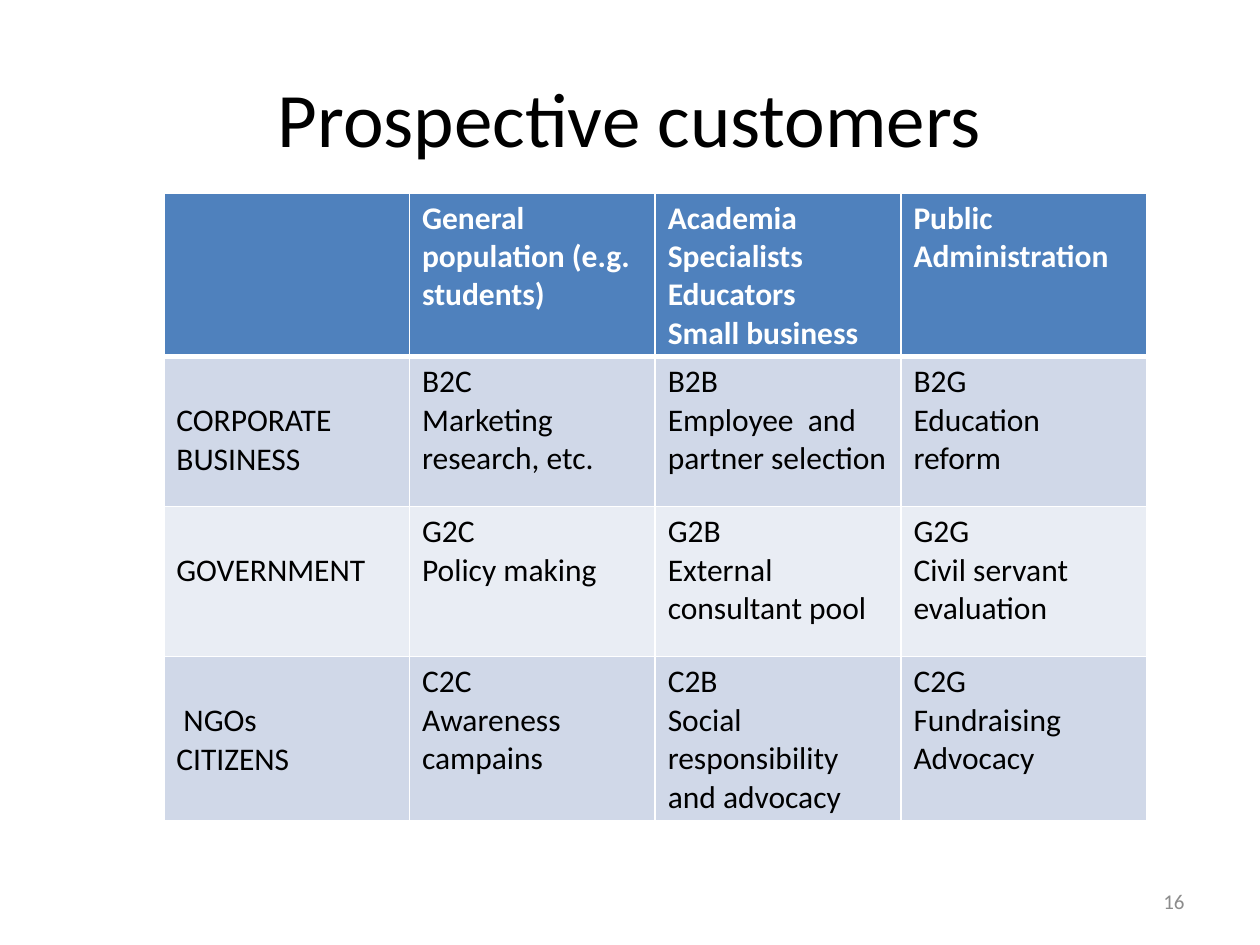
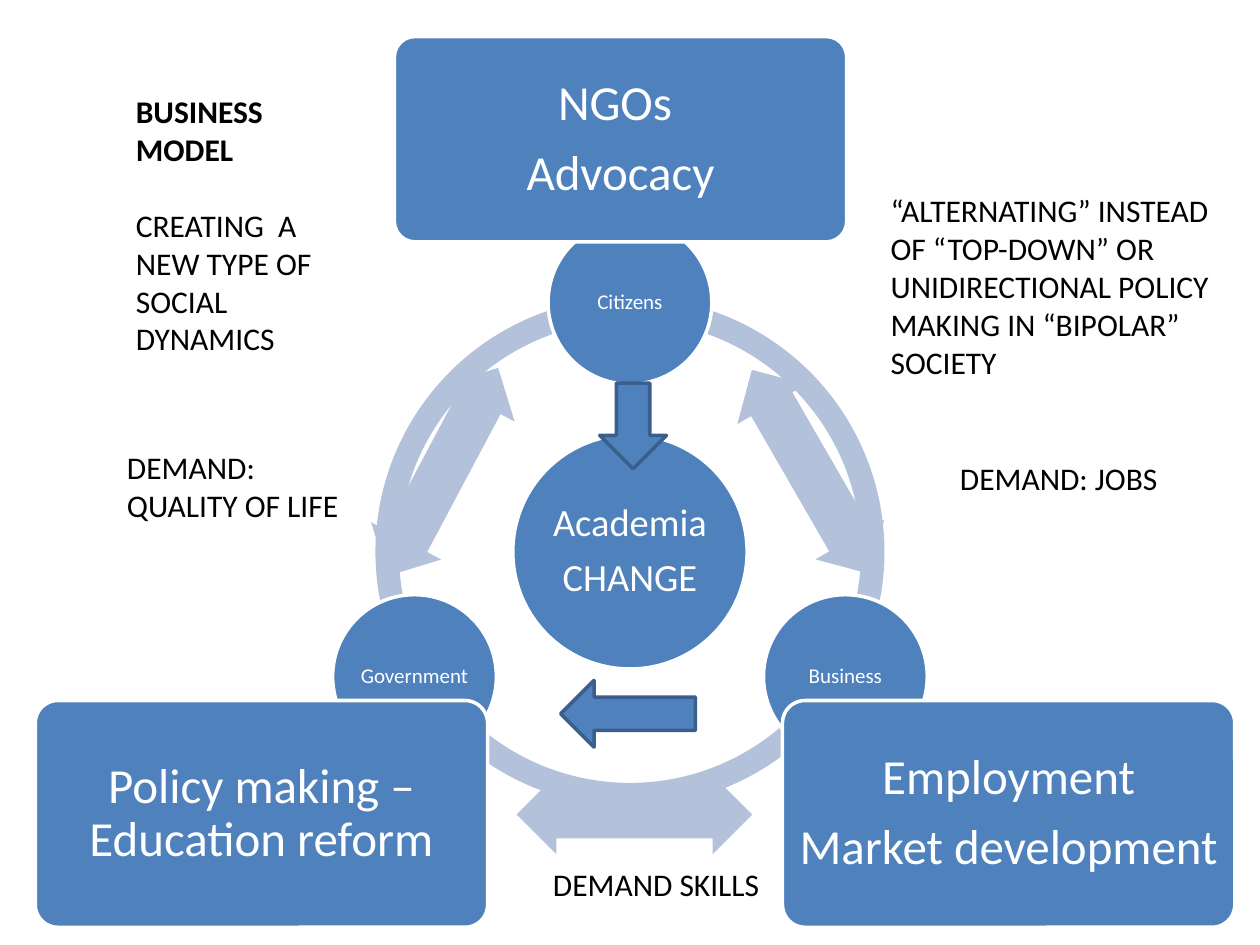
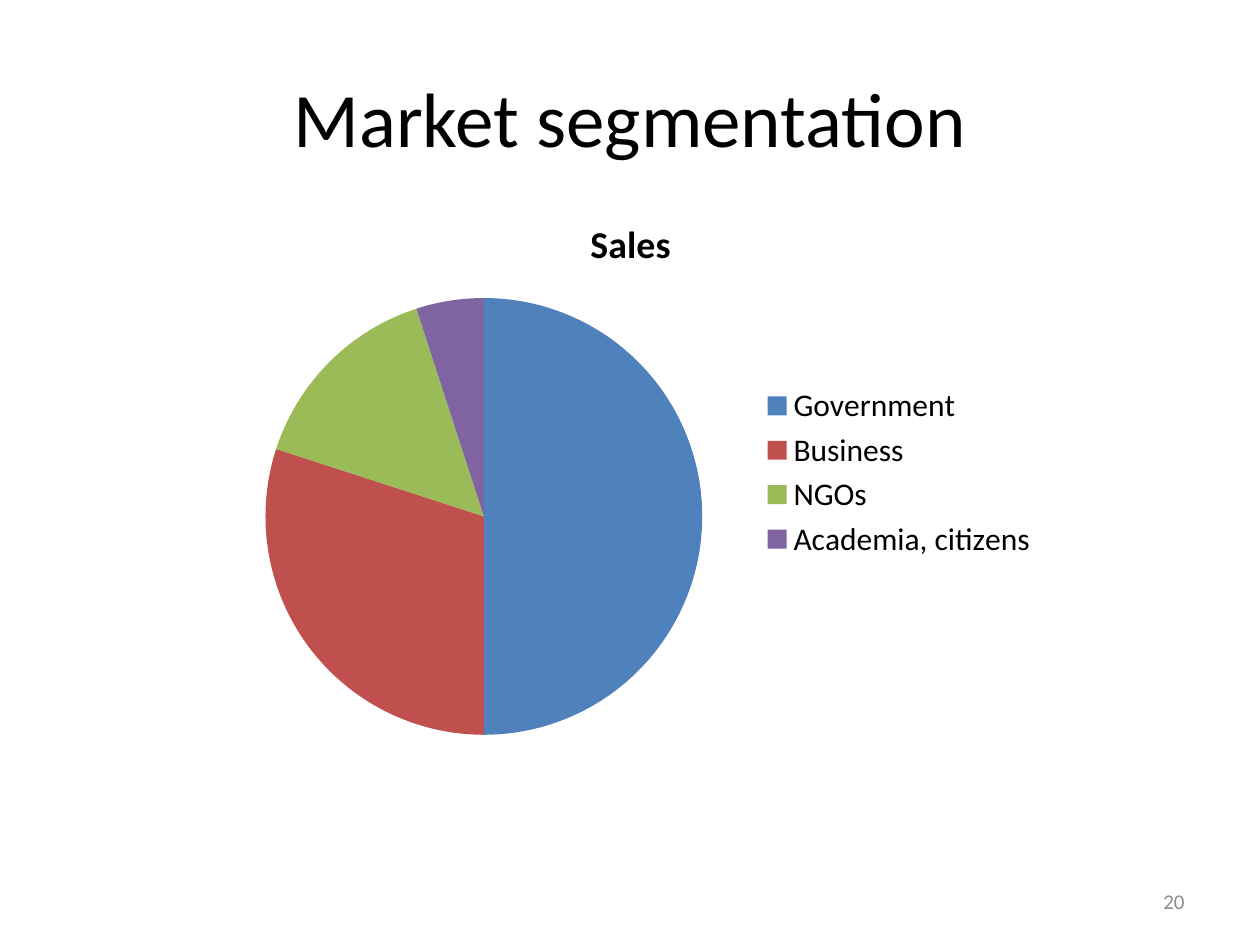
from dataclasses import dataclass
from math import cos, radians, sin

from lxml import etree
from pptx import Presentation
from pptx.chart.data import CategoryChartData
from pptx.dml.color import RGBColor
from pptx.enum.chart import XL_CHART_TYPE, XL_LEGEND_POSITION
from pptx.enum.shapes import MSO_SHAPE
from pptx.enum.text import MSO_ANCHOR, PP_ALIGN
from pptx.oxml.ns import qn
from pptx.util import Inches, Pt

# Shared look
FONT = "Calibri"
BLACK = RGBColor(0x00, 0x00, 0x00)
WHITE = RGBColor(0xFF, 0xFF, 0xFF)
GRAY = RGBColor(0x8C, 0x8C, 0x8C)
BLUE = RGBColor(0x4F, 0x81, 0xBD)
DARK_BLUE = RGBColor(0x3A, 0x5F, 0x8C)
PALE_BLUE = RGBColor(0xB3, 0xC1, 0xDB)
BANDS = (RGBColor(0xD0, 0xD8, 0xE8), RGBColor(0xE9, 0xED, 0xF4))
PIE_COLORS = (BLUE, RGBColor(0xC0, 0x50, 0x4D), RGBColor(0x9B, 0xBB, 0x59),
              RGBColor(0x80, 0x64, 0xA2))

LEFT, CENTER, RIGHT = PP_ALIGN.LEFT, PP_ALIGN.CENTER, PP_ALIGN.RIGHT
TOP, MIDDLE = MSO_ANCHOR.TOP, MSO_ANCHOR.MIDDLE
ARC, OVAL, CARD = MSO_SHAPE.BLOCK_ARC, MSO_SHAPE.OVAL, MSO_SHAPE.ROUNDED_RECTANGLE
DOUBLE_ARROW = MSO_SHAPE.LEFT_RIGHT_ARROW
LEFT_ARROW, DOWN_ARROW = MSO_SHAPE.LEFT_ARROW, MSO_SHAPE.DOWN_ARROW
PIE, LEGEND_RIGHT = XL_CHART_TYPE.PIE, XL_LEGEND_POSITION.RIGHT

BODY_SIZE = 18
LINE_HEIGHT = 1.22  # of the font size


@dataclass(frozen=True)
class Place:
    left: float
    top: float
    width: float
    height: float

    def lengths(self) -> tuple:
        return tuple(Inches(n) for n in (self.left, self.top, self.width, self.height))


@dataclass(frozen=True)
class Style:
    size: float = BODY_SIZE
    color: RGBColor = BLACK
    bold: bool = False
    align: PP_ALIGN = LEFT


@dataclass(frozen=True)
class Figure:
    kind: MSO_SHAPE
    place: Place
    fill: RGBColor = BLUE
    outline: RGBColor | None = WHITE
    adjustments: tuple[float, ...] = ()
    rotation: float = 0
    lines: tuple[str, ...] = ()
    size: float = BODY_SIZE
    inset: float = 0


@dataclass(frozen=True)
class Note:
    place: Place
    lines: tuple[str, ...]
    heading: str = ""


TITLE = Style(44, align=CENTER)
NUMBER = Style(12, GRAY, align=RIGHT)
HEADER = Style(color=WHITE, bold=True)
BODY = Style()


def add_span(para, text: str, style: Style) -> None:
    para.alignment = style.align
    span = para.add_run()
    span.text = text
    span.font.name = FONT
    span.font.size = Pt(style.size)
    span.font.bold = style.bold
    span.font.color.rgb = style.color


def write_lines(frame, lines: tuple[str, ...], style: Style) -> list:
    paras = []
    for index, text in enumerate(lines):
        para = frame.add_paragraph() if index else frame.paragraphs[0]
        add_span(para, text, style)
        paras.append(para)
    return paras


def add_box(page, place: Place, anchor: MSO_ANCHOR = TOP):
    frame = page.shapes.add_textbox(*place.lengths()).text_frame
    frame.word_wrap = True
    frame.vertical_anchor = anchor
    return frame


def add_page(deck, title: str = "", number: str = ""):
    page = deck.slides.add_slide(deck.slide_layouts[6])
    if title:
        write_lines(add_box(page, Place(0.5, 0.3, 9, 1.25), MIDDLE), (title,), TITLE)
    if number:
        write_lines(add_box(page, Place(7.17, 6.95, 2.33, 0.4), MIDDLE), (number,), NUMBER)
    return page


def add_figure(page, figure: Figure) -> None:
    shape = page.shapes.add_shape(figure.kind, *figure.place.lengths())
    shape.shadow.inherit = False
    shape.rotation = figure.rotation
    for index, value in enumerate(figure.adjustments):
        shape.adjustments[index] = value
    shape.fill.solid()
    shape.fill.fore_color.rgb = figure.fill
    if figure.outline is None:
        shape.line.fill.background()
    else:
        shape.line.color.rgb = figure.outline
        shape.line.width = Pt(2)
    if figure.lines:
        frame = shape.text_frame
        frame.word_wrap = True
        frame.vertical_anchor = MIDDLE
        frame.margin_left = frame.margin_right = Inches(figure.inset)
        frame.margin_top = frame.margin_bottom = Inches(figure.inset)
        for para in write_lines(frame, figure.lines, Style(figure.size, WHITE, align=CENTER)):
            para.line_spacing = 0.9
            para.space_after = Pt(round(0.35 * figure.size, 1))


def add_note(page, note: Note) -> None:
    frame = add_box(page, note.place)
    if not note.heading:
        write_lines(frame, note.lines, BODY)
        return
    add_span(frame.paragraphs[0], note.heading, Style(bold=True))
    for index, text in enumerate(note.lines):
        para = frame.add_paragraph()
        add_span(para, text, BODY)
        if index == 0:
            para.space_before = Pt(BODY_SIZE * LINE_HEIGHT)


def set_borders(cell, top: float, bottom: float) -> None:
    properties = cell._tc.get_or_add_tcPr()
    for side, width in (("L", 1), ("R", 1), ("T", top), ("B", bottom)):
        line = etree.SubElement(properties, qn(f"a:ln{side}"), w=str(Pt(width)))
        fill = etree.SubElement(line, qn("a:solidFill"))
        etree.SubElement(fill, qn("a:srgbClr"), val=str(WHITE))


# Customer table: one tuple of lines for each cell
CUSTOMERS = (
    ((), ("General population (e.g. students)",),
     ("Academia", "Specialists", "Educators", "Small business"),
     ("Public", "Administration")),
    (("CORPORATE", "BUSINESS"), ("B2C", "Marketing research, etc."),
     ("B2B", "Employee  and partner selection"), ("B2G", "Education reform")),
    (("GOVERNMENT",), ("G2C", "Policy making"),
     ("G2B", "External consultant pool"), ("G2G", "Civil servant evaluation")),
    ((" NGOs", "CITIZENS"), ("C2C", "Awareness campains"),
     ("C2B", "Social responsibility and advocacy"), ("C2G", "Fundraising", "Advocacy")),
)


def build_customers(deck) -> None:
    page = add_page(deck, "Prospective customers", "16")
    place = Place(1.3, 1.53, 7.8, 4.76)
    table = page.shapes.add_table(len(CUSTOMERS), len(CUSTOMERS[0]), *place.lengths()).table
    for row, cells in enumerate(CUSTOMERS):
        for column, lines in enumerate(cells):
            cell = table.cell(row, column)
            set_borders(cell, 3 if row == 1 else 1, 3 if row == 0 else 1)
            cell.fill.solid()
            cell.fill.fore_color.rgb = BANDS[(row - 1) % 2] if row else BLUE
            write_lines(cell.text_frame, lines, BODY if row else HEADER)
            if row and column == 0:  # row names start one line lower
                cell.margin_top = Inches(0.36)


# Social dynamics ring
RING_X, RING_Y = 5, 4.38
ORBIT = 1.98


def circle(radius: float, x: float = RING_X, y: float = RING_Y) -> Place:
    return Place(round(x - radius, 2), round(y - radius, 2), 2 * radius, 2 * radius)


def ring_arc(start: float, end: float) -> Figure:
    # Angles are stored in 60000ths of a degree, adjustments in 100000ths
    return Figure(ARC, circle(2.02), PALE_BLUE, None, (start * 0.6, end * 0.6, 0.046))


def ring_node(label: str, angle: float) -> Figure:
    x = RING_X + ORBIT * cos(radians(angle))
    y = RING_Y + ORBIT * sin(radians(angle))
    return Figure(OVAL, circle(0.65, x, y), lines=(label,), size=12)


def card(left: float, top: float, height: float, *lines: str) -> Figure:
    return Figure(CARD, Place(left, top, 3.59, height), adjustments=(0.1,),
                  lines=lines, size=28, inset=0.06)


def exchange(left: float, top: float, rotation: float) -> Figure:
    return Figure(DOUBLE_ARROW, Place(left, top, 1.87, 0.63), PALE_BLUE, None,
                  (0.6, 0.5), rotation)


FIGURES = (
    ring_arc(90, 162),
    ring_arc(18, 90),
    ring_arc(162, 18),
    Figure(OVAL, circle(0.93), lines=("Academia", "CHANGE"), size=22),
    ring_node("Citizens", -90),
    ring_node("Business", 30),
    ring_node("Government", 150),
    Figure(LEFT_ARROW, Place(4.45, 5.4, 1.07, 0.53), outline=DARK_BLUE),
    Figure(DOWN_ARROW, Place(4.76, 3.04, 0.53, 0.68), outline=DARK_BLUE),
    card(3.13, 0.29, 1.63, "NGOs ", "Advocacy"),
    exchange(5.5, 3.43, 60),
    card(6.21, 5.56, 1.8, "Employment", "Market development"),
    exchange(4.1, 6.15, 180),
    card(0.28, 5.56, 1.8, "Policy making – Education reform"),
    exchange(2.58, 3.43, 298),
)

NOTES = (
    Note(Place(4.29, 6.82, 1.97, 0.4), ("DEMAND SKILLS",)),
    Note(Place(7.52, 3.59, 1.89, 0.4), ("DEMAND: JOBS",)),
    Note(Place(0.91, 3.51, 1.97, 0.71), ("DEMAND:", "QUALITY OF LIFE")),
    Note(Place(0.98, 0.68, 1.65, 2.22), ("CREATING  A NEW TYPE OF", "SOCIAL DYNAMICS"),
         "BUSINESS MODEL"),
    Note(Place(6.97, 1.47, 2.76, 1.62),
         ("“ALTERNATING” INSTEAD OF “TOP-DOWN” OR UNIDIRECTIONAL POLICY MAKING "
          "IN “BIPOLAR” SOCIETY",)),
)


def build_dynamics(deck) -> None:
    page = add_page(deck)
    for figure in FIGURES:
        add_figure(page, figure)
    for note in NOTES:
        add_note(page, note)


# Market segments
SEGMENTS = {"Government": 50, "Business": 30, "NGOs": 15, "Academia, citizens": 5}


def build_segments(deck) -> None:
    page = add_page(deck, "Market segmentation", "20")
    data = CategoryChartData()
    data.categories = list(SEGMENTS)
    data.add_series("Sales", list(SEGMENTS.values()))
    place = Place(1.67, 1.53, 6.67, 4.44)
    chart = page.shapes.add_chart(PIE, *place.lengths(), data).chart
    chart.font.name = FONT
    chart.font.size = Pt(BODY_SIZE)
    chart.font.color.rgb = BLACK
    chart.has_title = True
    add_span(chart.chart_title.text_frame.paragraphs[0], "Sales",
             Style(21.6, bold=True, align=CENTER))
    chart.chart_title.include_in_layout = False
    chart.has_legend = True
    chart.legend.position = LEGEND_RIGHT
    chart.legend.include_in_layout = False
    plot = chart.plots[0]
    plot.vary_by_categories = True
    for index, color in enumerate(PIE_COLORS):
        fill = plot.series[0].points[index].format.fill
        fill.solid()
        fill.fore_color.rgb = color


def main() -> None:
    deck = Presentation()
    deck.slide_width, deck.slide_height = Inches(10), Inches(7.5)
    build_customers(deck)
    build_dynamics(deck)
    build_segments(deck)
    deck.save("out.pptx")


if __name__ == "__main__":
    main()
